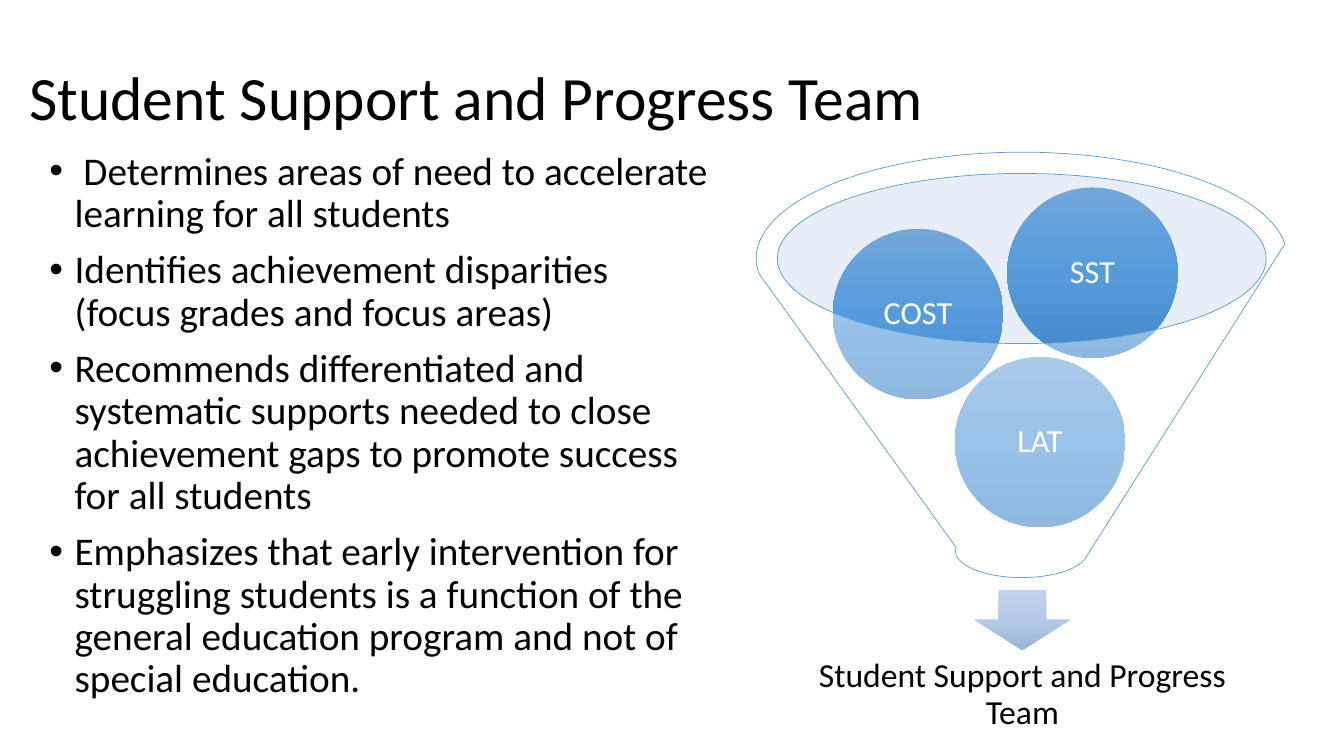
from copy import deepcopy

from lxml import etree
from pptx import Presentation
from pptx.dml.color import RGBColor
from pptx.enum.shapes import MSO_SHAPE
from pptx.enum.text import MSO_ANCHOR, MSO_AUTO_SIZE, PP_ALIGN
from pptx.oxml.ns import qn
from pptx.util import Inches, Pt

ELLIPSE, FUNNEL, ARROW = MSO_SHAPE.OVAL, MSO_SHAPE.FUNNEL, MSO_SHAPE.DOWN_ARROW
LEFT, CENTER = PP_ALIGN.LEFT, PP_ALIGN.CENTER
TOP, MIDDLE = MSO_ANCHOR.TOP, MSO_ANCHOR.MIDDLE
NO_FIT = MSO_AUTO_SIZE.NONE

COLORS = {"text": "000000", "white": "FFFFFF", "mouth": "C4D5EB", "rim": "5B9BD5"}
GRADIENTS = {
    "ball": ("71A6DB", "559BDB", "448ACA"),
    "arrow": ("C0D2EB", "B3CBE9", "9BB4D3"),
}


class SlideBuilder:
    font = "Calibri"

    def __init__(self, prs):
        self.s = prs.slides.add_slide(prs.slide_layouts[1])

    def rgb(self, name):
        return RGBColor.from_string(COLORS[name])

    def set_text(self, sp, lines, size, color="text", align=LEFT, anchor=MIDDLE, inset=None, gap=0):
        tf = sp.text_frame
        frame = {"word_wrap": True, "auto_size": NO_FIT, "vertical_anchor": anchor}
        if inset is not None:
            for side in ("left", "top", "right", "bottom"):
                frame["margin_" + side] = Inches(inset)
        for name, value in frame.items():
            setattr(tf, name, value)
        for i, line in enumerate(lines):
            p = tf.paragraphs[0] if i == 0 else tf.add_paragraph()
            layout = {"alignment": align, "line_spacing": 0.9, "space_before": Pt(gap if i else 0)}
            for name, value in layout.items():
                setattr(p, name, value)
            r = p.add_run()
            r.text = line
            for name, value in {"name": self.font, "size": Pt(size)}.items():
                setattr(r.font, name, value)
            r.font.color.rgb = self.rgb(color)
        return tf

    def placeholder(self, idx, box, lines, size, **style):
        sp = self.s.placeholders[idx]
        sp.left, sp.top, sp.width, sp.height = map(Inches, box)
        return self.set_text(sp, lines, size, **style)

    def bullets(self, box, lines, size):
        tf = self.placeholder(1, box, lines, size, anchor=TOP, gap=10)
        for p in tf.paragraphs:
            pPr = p._p.get_or_add_pPr()
            pPr.set("marL", str(Inches(0.25)))
            pPr.set("indent", str(-Inches(0.25)))
            etree.SubElement(pPr, qn("a:buFont")).set("typeface", "Arial")
            etree.SubElement(pPr, qn("a:buChar")).set("char", "•")

    def shape(self, kind, box):
        sp = self.s.shapes.add_shape(kind, *map(Inches, box))
        sp.shadow.inherit = False
        sp.line.fill.background()
        return sp

    def glass(self, kind, box, color, line=None):
        sp = self.shape(kind, box)
        sp.fill.solid()
        sp.fill.fore_color.rgb = self.rgb(color)
        clr = sp._element.spPr.find(qn("a:solidFill"))[0]
        etree.SubElement(clr, qn("a:alpha")).set("val", "40000")
        if line:
            sp.line.color.rgb = self.rgb(line)
            sp.line.width = Pt(0.5)

    def shaded(self, kind, box, gradient):
        sp = self.shape(kind, box)
        sp.fill.gradient()
        sp.fill.gradient_angle = 270
        stops = sp._element.spPr.find(".//" + qn("a:gsLst"))
        stops.insert(1, deepcopy(stops[0]))
        for i, (stop, color) in enumerate(zip(sp.fill.gradient_stops, GRADIENTS[gradient])):
            stop.position = i / 2
            stop.color.rgb = RGBColor.from_string(color)
        return sp

    def label(self, box, text, size):
        sp = self.s.shapes.add_textbox(*map(Inches, box))
        self.set_text(sp, [text], size, align=CENTER, inset=0.19)

    def ball(self, left, top, text):
        sp = self.shaded(ELLIPSE, (left, top, 1.69, 1.69), "ball")
        self.set_text(sp, [text], 23, color="white", align=CENTER, inset=0.03)


def main():
    prs = Presentation()
    prs.slide_width, prs.slide_height = Inches(13.33), Inches(7.5)
    b = SlideBuilder(prs)

    # Title and list
    team = "Student Support and Progress Team"
    b.placeholder(0, (0.19, 0.27, 9.28, 1.45), [team], 44)
    b.bullets((0.39, 1.45, 6.74, 6.49), [
        " Determines areas of need to accelerate learning for all students",
        "Identifies achievement disparities (focus grades and focus areas)",
        "Recommends differentiated and systematic supports needed to close "
        "achievement gaps to promote success for all students",
        "Emphasizes that early intervention for struggling students is a function "
        "of the general education program and not of special education.",
    ], 28)

    # Funnel mouth, arrow and result
    b.glass(ELLIPSE, (7.7, 1.72, 4.86, 1.69), "mouth")
    b.shaded(ARROW, (9.67, 5.85, 0.94, 0.6), "arrow")
    b.label((7.88, 6.33, 4.52, 1.13), team, 24)

    # Teams inside the funnel
    for left, top, text in ((9.47, 3.54, "LAT"), (8.26, 2.27, "COST"), (9.99, 1.86, "SST")):
        b.ball(left, top, text)

    # Funnel glass in front
    b.glass(FUNNEL, (7.5, 1.51, 5.27, 4.22), "white", line="rim")

    prs.save("out.pptx")


if __name__ == "__main__":
    main()
